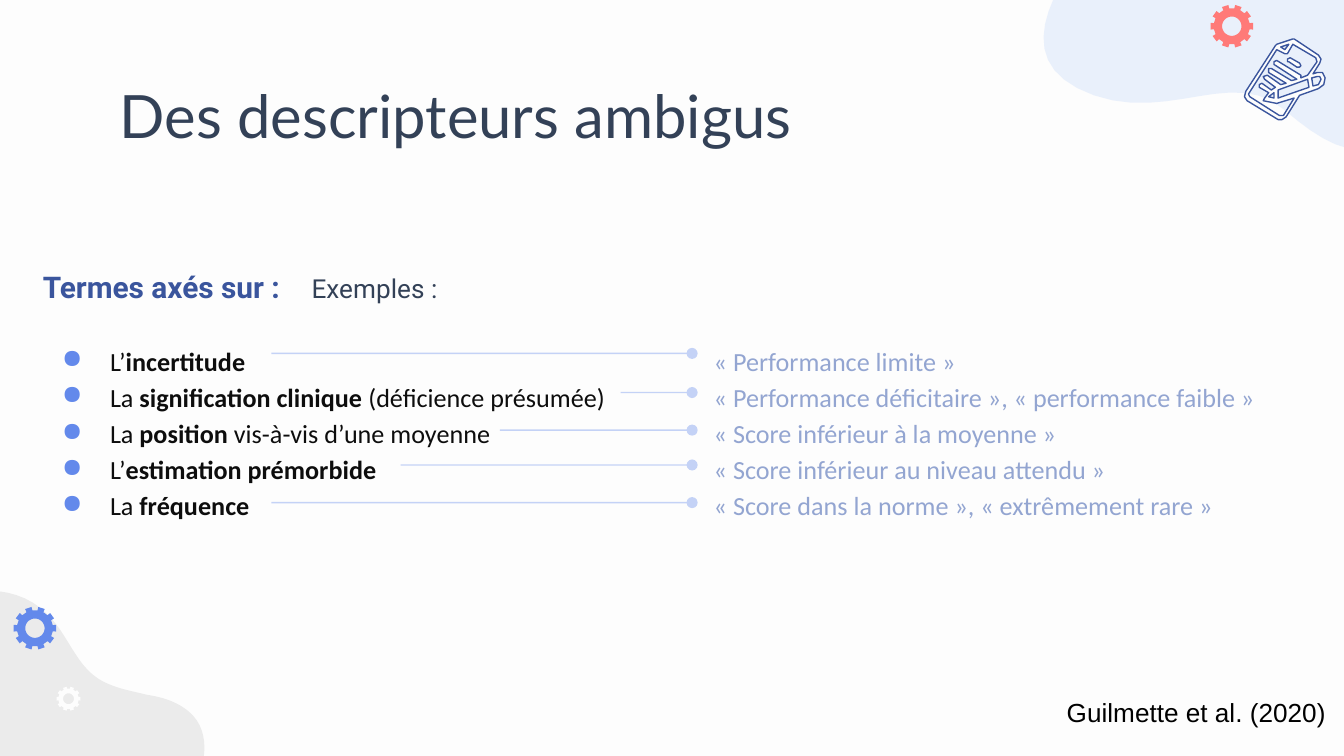
from math import cos, pi, sin

from lxml import etree
from pptx import Presentation
from pptx.dml.color import RGBColor
from pptx.enum.shapes import MSO_CONNECTOR
from pptx.enum.text import MSO_ANCHOR
from pptx.oxml.ns import qn
from pptx.util import Cm, Pt

STRAIGHT = MSO_CONNECTOR.STRAIGHT
TOP = MSO_ANCHOR.TOP

# Content: lead-in, bold term, remainder, example, then the line's left end and height (cm)
TITLE = "Des descripteurs ambigus"
HEADINGS = ("Termes axés sur :", "Exemples :")
CITATION = "Guilmette et al. (2020)"
TERMS = [
    ("L’", "incertitude", "", "« Performance limite »", 5.13, 6.68),
    ("La ", "signification clinique", " (déficience présumée)",
     "« Performance déficitaire », « performance faible »", 11.73, 7.42),
    ("La ", "position", " vis-à-vis d’une moyenne",
     "« Score inférieur à la moyenne »", 9.45, 8.13),
    ("L’", "estimation prémorbide", "",
     "« Score inférieur au niveau attendu »", 7.57, 8.79),
    ("La ", "fréquence", "",
     "« Score dans la norme », « extrêmement rare »", 5.13, 9.5),
]
LINE_END = 13.08
HEADING_TAB, EXAMPLE_TAB = 5.08, 12.68

# Text formats
TITLE_FORMAT = {"name": "Lato", "size": Pt(32), "color": "334157"}
HEADING_FORMAT = {"name": "Roboto", "size": Pt(16), "color": "3A559D", "bold": True}
SUBHEADING_FORMAT = {"name": "Roboto", "size": Pt(14), "color": "334157", "bold": False}
TERM_FORMAT = {"name": "Calibri", "size": Pt(14), "color": "0D0D0D", "bold": False}
KEYWORD_FORMAT = {**TERM_FORMAT, "bold": True}
EXAMPLE_FORMAT = {**TERM_FORMAT, "color": "93A5D1"}
CITATION_FORMAT = {"name": "Arial", "size": Pt(14), "color": "000000"}

# Drawings, in hundredths of 2.54 cm
UNIT = Cm(2.54) / 100
# Blobs: colour, opacity, start, then cubic curves (two handles and an end)
BLOBS = [
    ("CBDDFA", 39, (800, -157), [
        (801, -159, 802, -161, 803, -162), (804, -163, 804, -163, 804, -164),
        (838, -204, 922, -154, 979, -129), (1012, -115, 1008, -118, 1066, -100),
        (1110, -85, 1118, -59, 1109, -42), (1108, -41, 1108, -40, 1107, -40),
        (1105, -36, 1102, -32, 1098, -29), (1077, -15, 1066, -11, 1050, 61),
        (1034, 134, 994, 115, 956, 82), (918, 49, 871, 91, 814, 71),
        (758, 51, 774, 9, 802, -32), (830, -73, 770, -104, 800, -157)]),
    ("EBEBEB", 100, (-73, 604), [
        (-91, 577, -96, 543, -89, 511), (-82, 485, -66, 460, -41, 447),
        (-17, 435, 16, 437, 35, 457), (50, 471, 56, 494, 73, 505),
        (84, 512, 97, 514, 109, 517), (122, 519, 135, 523, 144, 533),
        (155, 545, 154, 566, 146, 581), (137, 596, 122, 606, 107, 615),
        (65, 638, 7, 661, -39, 635), (-52, 628, -64, 617, -73, 604)]),
]
# Gears: colour, centre, outer radius
GEARS = [("FF7A78", 916.5, 19.5, 16), ("6389EB", 26, 467.5, 16), ("FDFDFD", 51, 520, 9)]
TEETH = 10
# Notepad with pencil: outer edge, pencil parts, sheet with its text lines
NOTEPAD = [
    [(963, 29), (962, 29), (950, 33), (949, 34), (927, 68), (926, 72), (928, 75),
     (951, 89), (954, 89), (957, 87), (967, 71), (981, 66), (985, 63), (986, 58),
     (984, 54), (980, 54), (977, 55), (982, 47), (983, 44), (981, 41)],
    [(959, 33), (956, 37), (953, 35)],
    [(982, 57), (983, 59), (981, 63), (977, 64), (976, 58), (980, 57)],
    [(973, 59), (974, 65), (951, 73), (951, 67)],
    [(948, 69), (948, 73), (944, 72)],
    [(979, 43), (980, 46), (973, 56), (968, 58), (968, 56), (950, 45), (948, 46),
     (948, 48), (965, 59), (961, 60), (946, 51), (944, 51), (944, 54), (957, 62),
     (953, 63), (943, 56), (940, 57), (941, 59), (949, 65), (946, 67), (939, 62),
     (937, 63), (937, 65), (944, 69), (941, 73), (940, 75), (950, 77), (963, 73),
     (955, 86), (952, 86), (930, 72), (929, 70), (950, 37), (956, 40), (958, 40),
     (962, 33)],
]
FLAP_LINE = [(960, 43), (958, 44), (958, 46), (959, 46), (965, 50), (967, 50),
             (968, 49), (967, 47)]


def color(value):
    return RGBColor.from_string(value)


def set_opacity(shape, percent):
    for element in shape._element.spPr.iter(qn("a:srgbClr")):
        etree.SubElement(element, qn("a:alpha"), val=str(percent * 1000))


def draw_outline(slide, contours, fill, line=None):
    scaled = [[(x * UNIT, y * UNIT) for x, y in contour] for contour in contours]
    builder = slide.shapes.build_freeform(*scaled[0][0], scale=1.0)
    builder.add_line_segments(scaled[0][1:], close=True)
    for contour in scaled[1:]:
        builder.move_to(*contour[0])
        builder.add_line_segments(contour[1:], close=True)
    shape = builder.convert_to_shape()
    shape.shadow.inherit = False
    shape.fill.solid()
    shape.fill.fore_color.rgb = color(fill)
    if line:
        shape.line.color.rgb = color(line)
        shape.line.width = Pt(0.75)
    else:
        shape.line.fill.background()
    return shape


def curve_points(start, curves, steps=12):
    points = [start]
    for x1, y1, x2, y2, x3, y3 in curves:
        x0, y0 = points[-1]
        for step in range(1, steps + 1):
            t = step / steps
            a, b, c, d = (1 - t) ** 3, 3 * t * (1 - t) ** 2, 3 * t * t * (1 - t), t ** 3
            points.append((a * x0 + b * x1 + c * x2 + d * x3,
                           a * y0 + b * y1 + c * y2 + d * y3))
    return points


def gear_contours(x, y, radius):
    def polar(distance, angle):
        return x + distance * radius * cos(angle), y + distance * radius * sin(angle)

    corners = [(0.84, -0.27), (1, -0.25), (1, 0.25), (0.84, 0.27)]
    rim = [polar(distance, 2 * pi * (tooth + shift) / TEETH)
           for tooth in range(TEETH) for distance, shift in corners]
    hole = [polar(0.45, -2 * pi * step / 36) for step in range(36)]
    return [rim, hole]


def add_run(paragraph, text, text_format):
    run = paragraph.add_run()
    run.text = text
    for name, value in text_format.items():
        if name == "color":
            run.font.color.rgb = color(value)
        else:
            setattr(run.font, name, value)


def add_box(slide, position, inset, wrap=True):
    frame = slide.shapes.add_textbox(*map(Cm, position)).text_frame
    margins = {"margin_left": Cm(0.25), "margin_right": Cm(0.25),
               "margin_top": Cm(inset), "margin_bottom": Cm(inset)}
    for name, value in {**margins, "word_wrap": wrap, "vertical_anchor": TOP}.items():
        setattr(frame, name, value)
    return frame


def format_paragraph(paragraph, tab, bullet=None):
    properties = paragraph._p.get_or_add_pPr()
    if bullet:
        properties.set("marL", str(Cm(1.27)))
        properties.set("indent", str(Cm(-0.91)))
        bullet_color = etree.SubElement(properties, qn("a:buClr"))
        etree.SubElement(bullet_color, qn("a:srgbClr"), val="6389EB")
        etree.SubElement(properties, qn("a:buChar"), char=bullet)
    tabs = etree.SubElement(properties, qn("a:tabLst"))
    etree.SubElement(tabs, qn("a:tab"), pos=str(Cm(tab)), algn="l")
    paragraph.line_spacing = 1.15


def add_leader(slide, left, height):
    leader = slide.shapes.add_connector(
        STRAIGHT, Cm(left), Cm(height), Cm(LINE_END), Cm(height))
    leader.line.color.rgb = color("6389EB")
    leader.line.width = Pt(0.75)
    set_opacity(leader, 37)
    etree.SubElement(leader.line._get_or_add_ln(), qn("a:tailEnd"), type="oval")
    etree.SubElement(leader._element.spPr, qn("a:effectLst"))


def main():
    presentation = Presentation()
    presentation.slide_width, presentation.slide_height = Cm(25.4), Cm(14.29)
    slide = presentation.slides.add_slide(presentation.slide_layouts[6])
    slide.background.fill.solid()
    slide.background.fill.fore_color.rgb = color("FDFDFD")

    # Decoration
    for fill, opacity, start, curves in BLOBS:
        blob = draw_outline(slide, [curve_points(start, curves)], fill)
        if opacity < 100:
            set_opacity(blob, opacity)
    for fill, x, y, radius in GEARS:
        draw_outline(slide, gear_contours(x, y, radius), fill)
    for contours in ([FLAP_LINE], NOTEPAD):
        draw_outline(slide, contours, "FDFDFD", "3A559D")

    # Title
    title = add_box(slide, (2.01, 1.24, 16.05, 2.82), 0.25)
    add_run(title.paragraphs[0], TITLE, TITLE_FORMAT)

    # Headings and terms with their examples
    body = add_box(slide, (0.56, 4.72, 24.84, 8.08), 0.25)
    heading = body.paragraphs[0]
    format_paragraph(heading, HEADING_TAB)
    add_run(heading, HEADINGS[0], HEADING_FORMAT)
    add_run(heading, "\t" + HEADINGS[1], SUBHEADING_FORMAT)
    heading.space_after = Pt(19.5)
    for lead, keyword, rest, example, left, height in TERMS:
        paragraph = body.add_paragraph()
        format_paragraph(paragraph, EXAMPLE_TAB, "●")
        add_run(paragraph, lead, TERM_FORMAT)
        add_run(paragraph, keyword, KEYWORD_FORMAT)
        add_run(paragraph, rest + "\t", TERM_FORMAT)
        add_run(paragraph, example, EXAMPLE_FORMAT)
        add_leader(slide, left, height)

    # Citation
    citation = add_box(slide, (19.91, 13.03, 5.49, 0.86), 0.13, wrap=False)
    add_run(citation.paragraphs[0], CITATION, CITATION_FORMAT)

    presentation.save("out.pptx")


if __name__ == "__main__":
    main()
